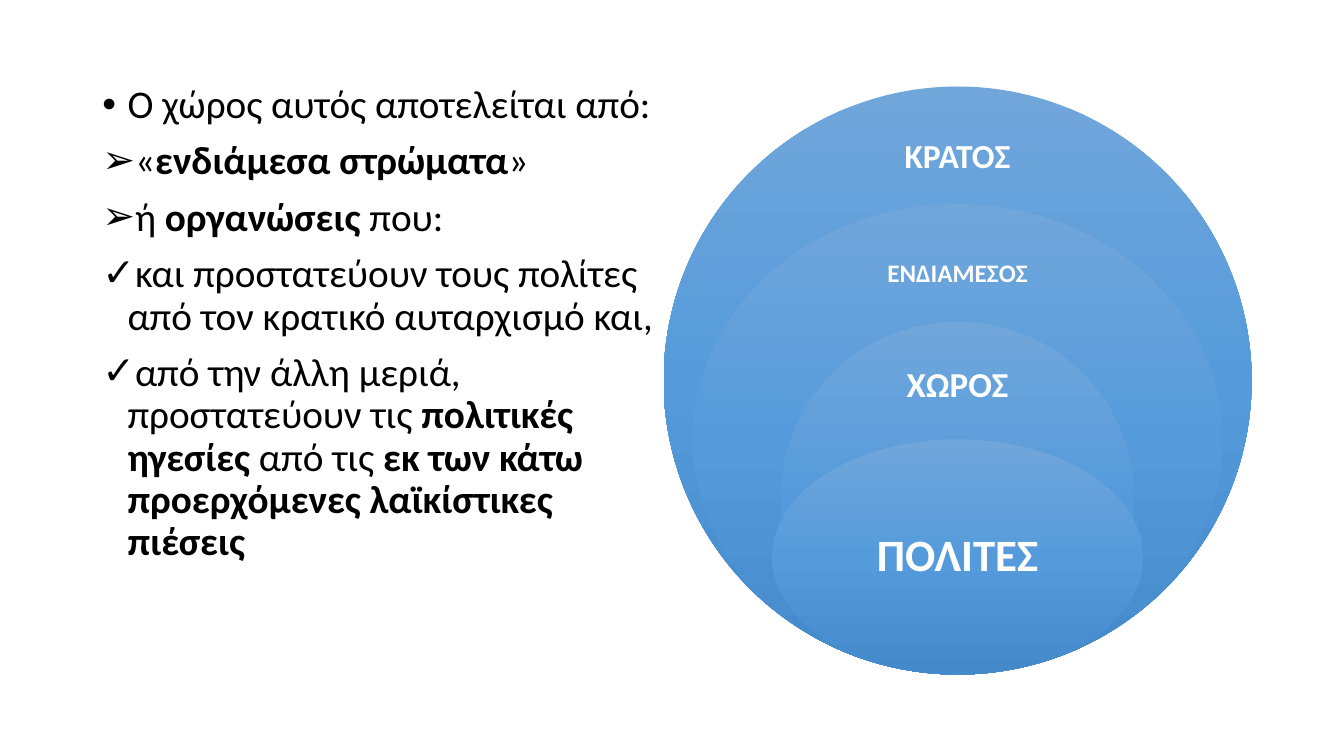
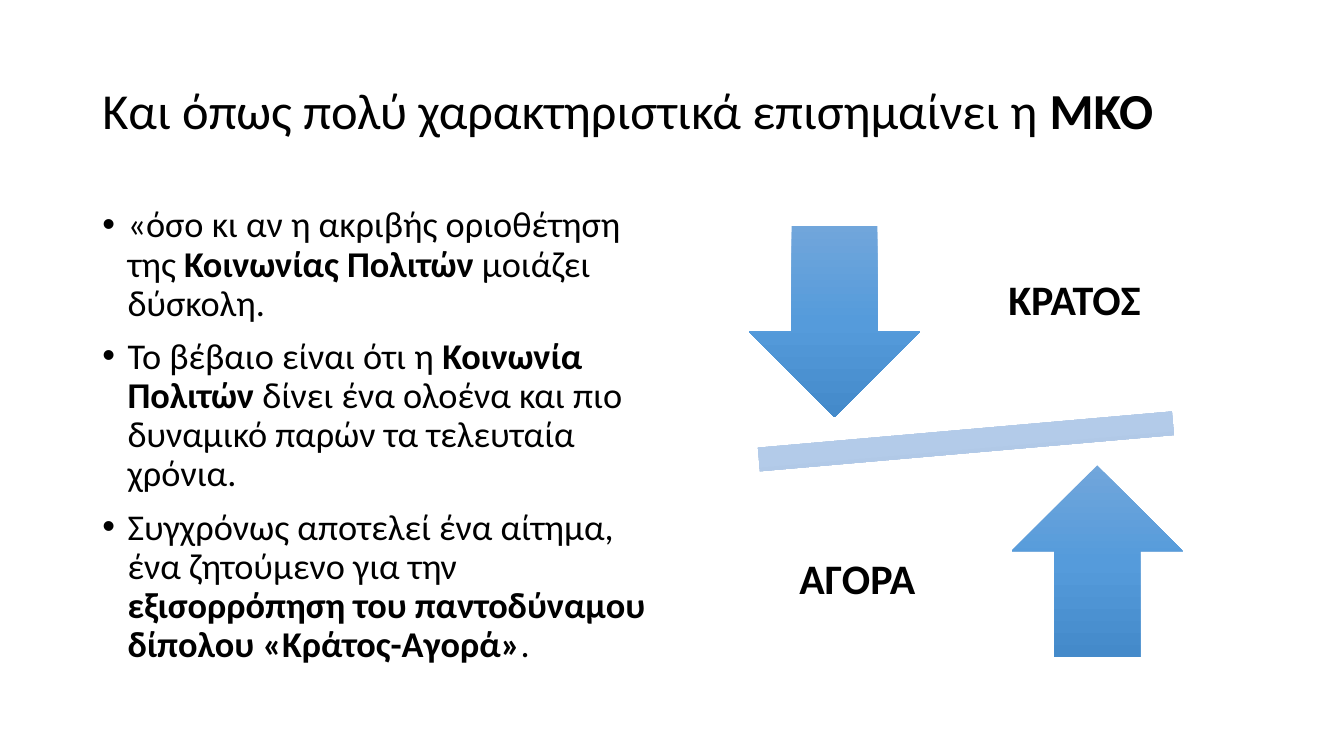
from copy import deepcopy
from lxml.etree import SubElement
from pptx import Presentation
from pptx.dml.color import RGBColor
from pptx.enum.shapes import MSO_SHAPE
from pptx.enum.text import MSO_ANCHOR, PP_ALIGN
from pptx.oxml.ns import qn
from pptx.util import Emu, Inches, Pt

CELL = Inches(1) // 12
COLS, ROWS = 160, 90
LEFT, HALF, RIGHT = 11, 68, 81
BLUE = ("71A6DB", "559BDB", "448ACA")
PALE = ("C0D2EB", "B3CBE9", "9BB4D3")
BLACK, WHITE = "000000", "FFFFFF"
TITLE = {"size": Pt(36), "name": "Calibri"}
LABEL = {"bold": True, "name": "Calibri"}

POINTS = (
    ("•", "Ο χώρος αυτός αποτελείται από:"),
    ("➢", "«*ενδιάμεσα στρώματα*»"),
    ("➢", "ή *οργανώσεις* που:"),
    ("✓", "και προστατεύουν τους πολίτες από τον κρατικό αυταρχισμό και,"),
    ("✓", "από την άλλη μεριά, προστατεύουν τις *πολιτικές ηγεσίες *από τις "
          "*εκ των κάτω προερχόμενες λαϊκίστικες πιέσεις*"),
)
QUOTES = (
    ("•", "«όσο κι αν η ακριβής οριοθέτηση της *Κοινωνίας Πολιτών *µοιάζει δύσκολη."),
    ("•", "Το βέβαιο είναι ότι η *Κοινωνία Πολιτών* δίνει ένα ολοένα και πιο "
          "δυναµικό παρών τα τελευταία χρόνια."),
    ("•", "Συγχρόνως αποτελεί ένα αίτηµα, ένα ζητούµενο για την *εξισορρόπηση "
          "του παντοδύναµου δίπολου «Κράτος-Αγορά»*."),
)
RINGS = (
    ("ΚΡΑΤΟΣ", 1, 24, 0.12),
    ("ΕΝΔΙΑΜΕΣΟΣ", 0.9, 18, 0.12),
    ("ΧΩΡΟΣ", 0.6, 25, 0.11),
    ("ΠΟΛΙΤΕΣ", 0.63, 32, 0.2),
)
SIDES = (
    (1, MSO_SHAPE.DOWN_ARROW, "ΚΡΑΤΟΣ"),
    (-1, MSO_SHAPE.UP_ARROW, "ΑΓΟΡΑ"),
)


def tint(code):
    """Turn a hex string into a colour."""
    return RGBColor.from_string(code)


def style(item, form):
    """Set every attribute named in a dict of format values."""
    for key, val in form.items():
        setattr(item, key, val)


def place(box):
    """Turn a box of grid cells into slide lengths."""
    return [Emu(round(part * CELL)) for part in box]


def share(box, mid, top, wide, high):
    """Give a centred part of a box from shares of its size."""
    left, head, width, height = box
    return (left + (mid - wide / 2) * width, head + (top - high / 2) * height,
            wide * width, high * height)


def write(para, text, form, code):
    """Write text whose starred parts are bold."""
    for num, part in enumerate(text.split("*")):
        if part:
            run = para.add_run()
            run.text = part
            style(run.font, {"bold": num % 2 == 1, **form})
            run.font.color.rgb = tint(code)


def frame(slide, box, form):
    """Add a wrapping text box and return its frame."""
    text = slide.shapes.add_textbox(*place(box)).text_frame
    style(text, {"word_wrap": True, **form})
    return text


def title(slide, text):
    """Add the slide title."""
    head = frame(slide, (LEFT, 4.8, 138, 17.4),
                 {"vertical_anchor": MSO_ANCHOR.MIDDLE})
    para = head.paragraphs[0]
    para.line_spacing = 0.9
    write(para, text, TITLE, BLACK)


def label(slide, box, text, size, code):
    """Centre a bold label in a box."""
    body = frame(slide, box, {
        "vertical_anchor": MSO_ANCHOR.MIDDLE, "margin_left": 0,
        "margin_right": 0, "margin_top": 0, "margin_bottom": 0})
    para = body.paragraphs[0]
    style(para, {"line_spacing": 0.9, "alignment": PP_ALIGN.CENTER})
    write(para, text, {"size": Pt(size), **LABEL}, code)


def bullets(slide, box, items, size):
    """Fill a box with bulleted paragraphs."""
    body = frame(slide, box, {})
    for num, (mark, text) in enumerate(items):
        para = body.add_paragraph() if num else body.paragraphs[0]
        style(para, {"line_spacing": 0.9, "space_before": Pt(10)})
        props = para._p.get_or_add_pPr()
        props.set("marL", str(Inches(0.25)))
        props.set("indent", str(-Inches(0.25)))
        SubElement(props, qn("a:buFont")).set("typeface", "Arial")
        SubElement(props, qn("a:buChar")).set("char", mark)
        write(para, text, {"size": Pt(size), "name": "Calibri"}, BLACK)


def solid(slide, kind, box, codes, turn=0):
    """Add a shape with a vertical gradient and no line."""
    shape = slide.shapes.add_shape(kind, *place(box))
    shape.rotation = turn
    shape.shadow.inherit = False
    shape.line.fill.background()
    shape.fill.gradient()
    shape.fill.gradient_angle = 270
    stops = shape._element.spPr.find(qn("a:gradFill")).find(qn("a:gsLst"))
    stops.insert(1, deepcopy(stops[0]))
    for num, (stop, code) in enumerate(zip(shape.fill.gradient_stops, codes)):
        stop.position = num / 2
        stop.color.rgb = tint(code)


def rings(slide, box):
    """Nest ellipses that share the bottom of the box."""
    for num, (text, wide, size, drop) in enumerate(RINGS):
        top = num / 5
        solid(slide, MSO_SHAPE.OVAL,
              share(box, 0.5, (1 + top) / 2, wide, 1 - top), BLUE)
        label(slide, share(box, 0.5, top + drop, 0.45, 0.15), text, size, WHITE)


def scale(slide, box):
    """Balance two arrows and labels around a tilted bar."""
    solid(slide, MSO_SHAPE.MATH_MINUS, share(box, 0.5, 0.5, 0.99, 0.21),
          PALE, 355)
    for sign, kind, text in SIDES:
        solid(slide, kind,
              share(box, 0.5 - sign * 0.23, 0.5 - sign * 0.25, 0.3, 0.4), BLUE)
        label(slide, share(box, 0.5 + sign * 0.19, 0.5 - sign * 0.29, 0.32, 0.42),
              text, 30, BLACK)


def main():
    """Build both slides and save them."""
    deck = Presentation()
    style(deck, {"slide_width": COLS * CELL, "slide_height": ROWS * CELL})
    first, second = (deck.slides.add_slide(deck.slide_layouts[6])
                     for _ in range(2))
    bullets(first, (LEFT, 9.5, HALF, 71.5), POINTS, 28)
    rings(first, (LEFT + HALF, 10.3, 70, 70))
    title(second, "Και όπως πολύ χαρακτηριστικά επισημαίνει η *ΜΚΟ*")
    bullets(second, (LEFT, 24, HALF, 57.1), QUOTES, 25.9)
    scale(second, (RIGHT, 24, HALF, 57.1))
    deck.save("out.pptx")


if __name__ == "__main__":
    main()
